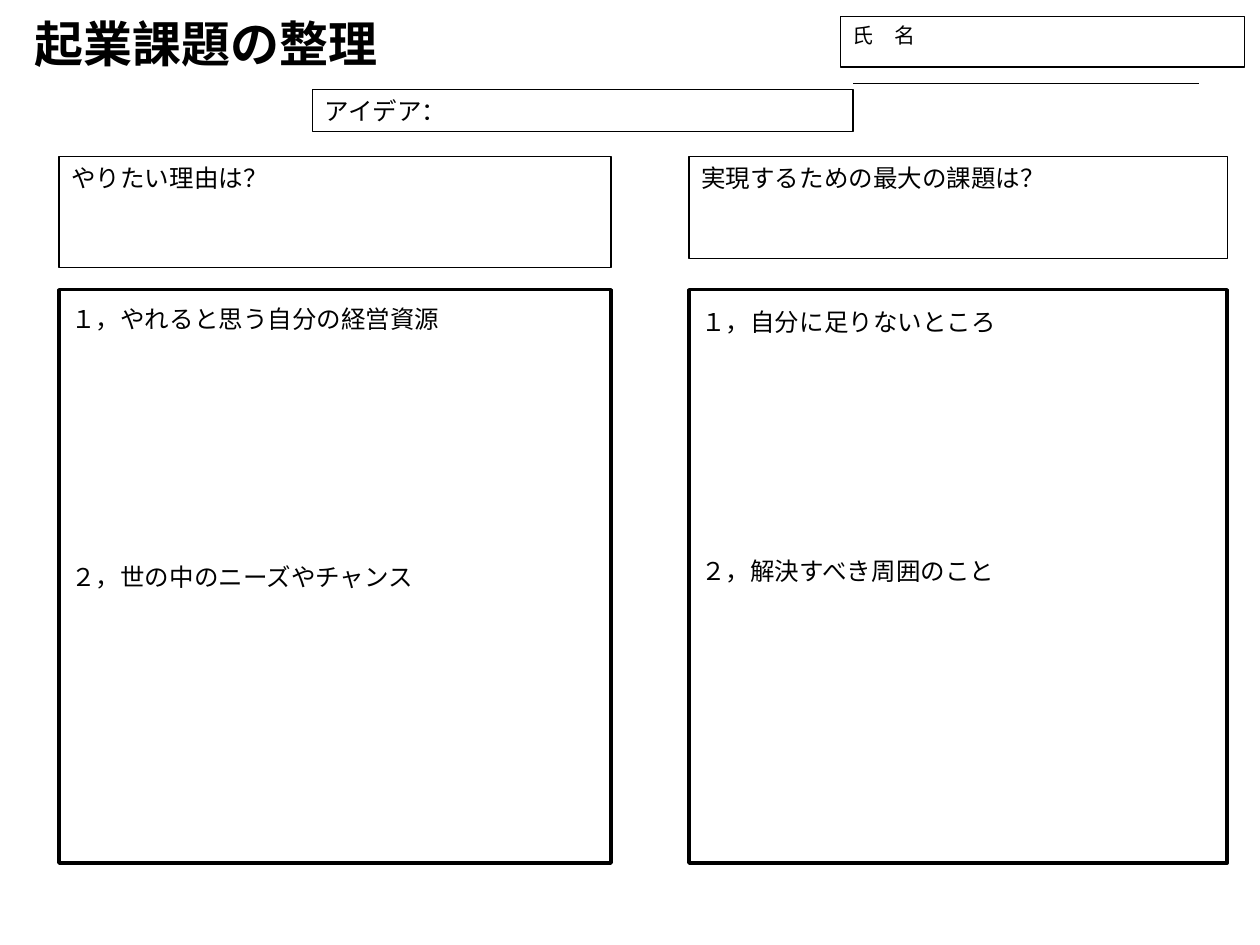
from lxml import etree
from pptx import Presentation
from pptx.dml.color import RGBColor
from pptx.enum.shapes import MSO_CONNECTOR, MSO_SHAPE
from pptx.enum.text import MSO_ANCHOR, MSO_AUTO_SIZE, PP_ALIGN
from pptx.oxml.ns import qn
from pptx.util import Cm, Pt

RECT, LINE = MSO_SHAPE.RECTANGLE, MSO_CONNECTOR.STRAIGHT
TOP, NONE = MSO_ANCHOR.TOP, MSO_AUTO_SIZE.NONE
LEFT, CENTER = PP_ALIGN.LEFT, PP_ALIGN.CENTER
FONT = "Noto Sans CJK JP"
COLORS = {"ink": "000000"}
INK = RGBColor.from_string(COLORS["ink"])

TITLE = "起業課題の整理"
NAME = "氏　名"
IDEA = "アイデア："
# left, width, question, question height, points, top inset, gap in points
COLS = [
    (1.19, 11.13, "やりたい理由は？", 2.24,
     ["１，やれると思う自分の経営資源", "２，世の中のニーズやチャンス"], 0.28, 131),
    (13.89, 10.85, "実現するための最大の課題は？", 2.06,
     ["１，自分に足りないところ", "２，解決すべき周囲のこと"], 0.34, 126),
]
ASK_Y, LIST_Y, LIST_H = 3.15, 5.84, 11.56


def write(shape, lines, size, align=LEFT, bold=False, gap=0):
    frame = shape.text_frame
    frame.text = "\n".join(lines)
    frame.word_wrap = True
    frame.auto_size = NONE
    frame.vertical_anchor = TOP
    for i, para in enumerate(frame.paragraphs):
        para.alignment = align
        para.space_before = Pt(gap if i else 0)
        font = para.font
        font.size, font.bold, font.name = Pt(size), bold, FONT
        font.color.rgb = INK
        # Japanese text takes its face from the East Asian font
        props = para._p.pPr.find(qn("a:defRPr"))
        etree.SubElement(props, qn("a:ea")).set("typeface", FONT)


def box(slide, x, y, w, h, lines, size=14, edge=0.75, inset=0.13, gap=0):
    shape = slide.shapes.add_shape(RECT, Cm(x), Cm(y), Cm(w), Cm(h))
    shape.shadow.inherit = False
    shape.fill.background()
    shape.line.color.rgb = INK
    shape.line.width = Pt(edge)
    shape.text_frame.margin_top = Cm(inset)
    write(shape, lines, size, gap=gap)


def rule(slide, x, y, end):
    line = slide.shapes.add_connector(LINE, Cm(x), Cm(y), Cm(end), Cm(y))
    line.line.color.rgb = INK
    line.line.width = Pt(0.75)
    etree.SubElement(line._element.spPr, qn("a:effectLst"))


def main():
    deck = Presentation()
    deck.slide_width, deck.slide_height = Cm(25.4), Cm(19.05)
    slide = deck.slides.add_slide(deck.slide_layouts[5])

    title = slide.shapes.title
    title.left, title.top = Cm(-0.15), Cm(0.15)
    title.width, title.height = Cm(8.61), Cm(1.19)
    write(title, [TITLE], 28, CENTER, True)

    box(slide, 16.94, 0.33, 8.15, 1.02, [NAME], size=12)
    rule(slide, 17.2, 1.68, 24.18)
    box(slide, 6.3, 1.8, 10.9, 0.86, [IDEA])
    for x, w, ask, h, points, inset, gap in COLS:
        box(slide, x, ASK_Y, w, h, [ask])
        box(slide, x, LIST_Y, w, LIST_H, points, edge=2, inset=inset, gap=gap)

    deck.save("out.pptx")


if __name__ == "__main__":
    main()
